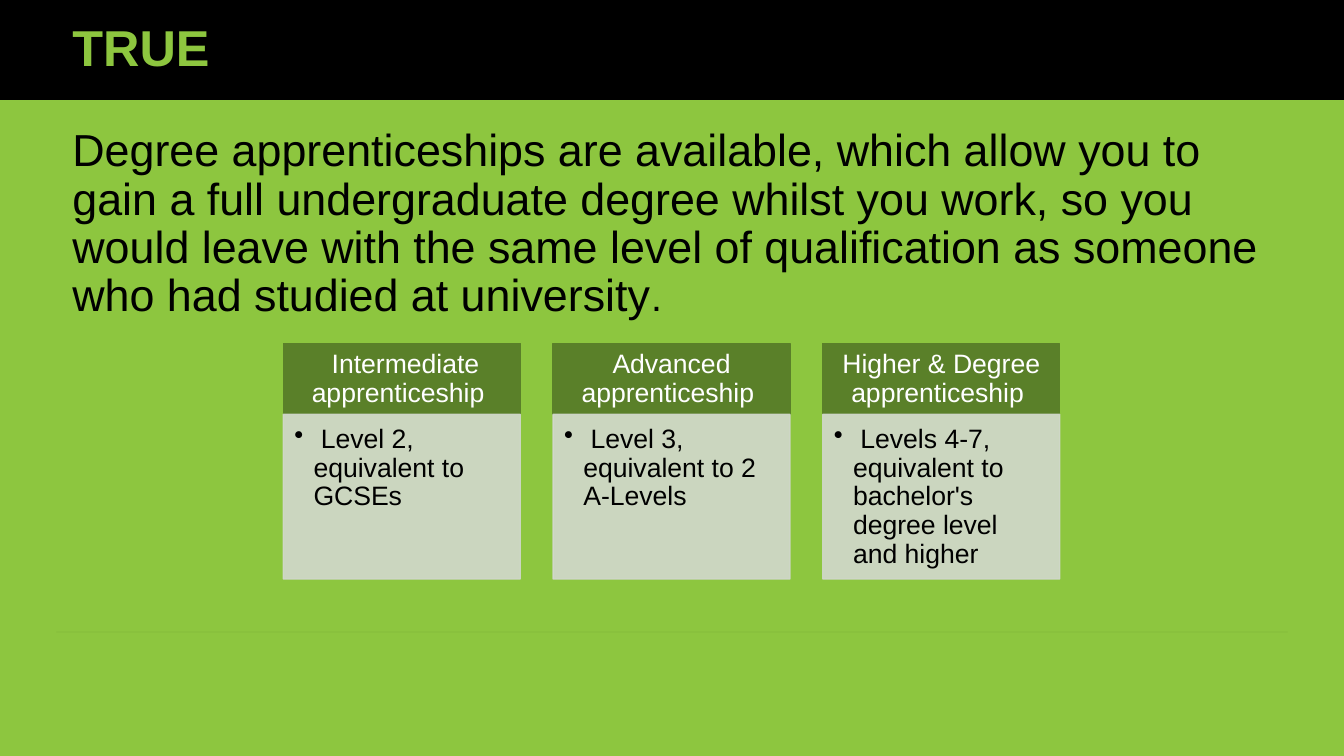
"""Build the slide on degree apprenticeships with its three level cards."""
from dataclasses import dataclass

from lxml.etree import SubElement
from pptx import Presentation
from pptx.dml.color import RGBColor
from pptx.enum.shapes import MSO_CONNECTOR as Connector, MSO_SHAPE as Preset
from pptx.enum.text import MSO_ANCHOR as Anchor, PP_ALIGN as Align
from pptx.oxml.ns import qn
from pptx.util import Inches, Pt


@dataclass(frozen=True)
class Theme:
    font: str = "Arial"
    lime: str = "8DC63F"
    moss: str = "5A8029"
    mist: str = "D2D8CD"
    black: str = "000000"
    white: str = "FFFFFF"
    title_size: int = 36
    lead_size: int = 32
    stop_size: int = 28
    card_size: int = 19
    line_spacing: float = 0.9


@dataclass(frozen=True)
class Area:
    """Position and size in percent of the slide."""
    left: float
    top: float
    width: float
    height: float


@dataclass(frozen=True)
class Card:
    heading: str
    detail: str


THEME = Theme()
SLIDE_WIDTH, SLIDE_HEIGHT = Inches(13.33), Inches(7.5)
BACKDROP = Area(0, 0, 100, 100)
BANNER = Area(0, 0, 100, 13.2)
TITLE = Area(4.65, 2.93, 90.75, 7.47)
LEAD = Area(4.65, 16.27, 90.75, 64.4)
RULE = Area(4.2, 83.6, 91.6, 0)
FIRST_CARD, CARD_PITCH, CARD_WIDTH = 21.08, 20.07, 17.63
HEADING_TOP, HEADING_HEIGHT, DETAIL_HEIGHT = 45.47, 9.33, 21.8
HEADING_INSETS = (0.15, 0.08, 0.15, 0.08)
DETAIL_INSETS = (0.11, 0.11, 0.15, 0.17)
BULLET_INDENT = Inches(0.19)

LEAD_TEXT = (
    "Degree apprenticeships are available, which allow you to gain a full "
    "undergraduate degree whilst you work, so you would leave with the same "
    "level of qualification as someone who had studied at university"
)
CARDS = [
    Card(" Intermediate apprenticeship ", " Level 2, equivalent to GCSEs"),
    Card("Advanced apprenticeship ", " Level 3, equivalent to 2 A-Levels"),
    Card("Higher & Degree apprenticeship ",
         " Levels 4-7, equivalent to bachelor's degree level and higher"),
]


def across(percent: float) -> int:
    return round(SLIDE_WIDTH * percent / 100)


def down(percent: float) -> int:
    return round(SLIDE_HEIGHT * percent / 100)


def place(area: Area) -> tuple[int, int, int, int]:
    return across(area.left), down(area.top), across(area.width), down(area.height)


def set_alpha(properties, percent: int) -> None:
    for color in properties.iter(qn("a:srgbClr")):
        SubElement(color, qn("a:alpha"), val=str(percent * 1000))


def style_font(font, size: int, color: str, bold: bool = False) -> None:
    font.name, font.size, font.bold = THEME.font, Pt(size), bold
    font.color.rgb = RGBColor.from_string(color)


def add_panel(page, area: Area, fill: str, outlined: bool = True):
    panel = page.shapes.add_shape(Preset.RECTANGLE, *place(area))
    panel.shadow.inherit = False
    panel.fill.solid()
    panel.fill.fore_color.rgb = RGBColor.from_string(fill)
    if outlined:
        panel.line.color.rgb = RGBColor.from_string(fill)
        panel.line.width = Pt(1)
    else:
        panel.line.fill.background()
    return panel


def add_rule(page) -> None:
    left, top, width, height = place(RULE)
    rule = page.shapes.add_connector(
        Connector.STRAIGHT, left, top, left + width, top + height)
    rule.line.color.rgb = RGBColor.from_string(THEME.moss)
    rule.line.width = Pt(0.5)
    properties = rule.line._get_or_add_ln().getparent()
    set_alpha(properties, 18)
    SubElement(properties, qn("a:effectLst"))


def add_text_box(page, area: Area, anchor: Anchor):
    frame = page.shapes.add_textbox(*place(area)).text_frame
    frame.word_wrap = True
    frame.vertical_anchor = anchor
    para = frame.paragraphs[0]
    para.line_spacing = THEME.line_spacing
    return para


def fill_panel(panel, text: str, insets: tuple[float, ...], anchor: Anchor,
               align: Align, color: str, bulleted: bool = False) -> None:
    frame = panel.text_frame
    frame.word_wrap = True
    frame.vertical_anchor = anchor
    (frame.margin_left, frame.margin_top,
     frame.margin_right, frame.margin_bottom) = map(Inches, insets)
    para = frame.paragraphs[0]
    para.text = text
    if bulleted:
        properties = para._p.get_or_add_pPr()
        properties.set("marL", str(BULLET_INDENT))
        properties.set("indent", str(-BULLET_INDENT))
        SubElement(properties, qn("a:buChar"), char="•")
    para.alignment = align
    para.line_spacing = THEME.line_spacing
    style_font(para.font, THEME.card_size, color)


def add_card(page, column: int, card: Card) -> None:
    left = FIRST_CARD + column * CARD_PITCH
    heading = add_panel(
        page, Area(left, HEADING_TOP, CARD_WIDTH, HEADING_HEIGHT), THEME.moss)
    fill_panel(heading, card.heading, HEADING_INSETS, Anchor.MIDDLE,
               Align.CENTER, THEME.white)
    detail_top = HEADING_TOP + HEADING_HEIGHT
    detail = add_panel(
        page, Area(left, detail_top, CARD_WIDTH, DETAIL_HEIGHT), THEME.mist)
    set_alpha(detail._element.spPr, 90)
    fill_panel(detail, card.detail, DETAIL_INSETS, Anchor.TOP,
               Align.LEFT, THEME.black, bulleted=True)


def main() -> None:
    deck = Presentation()
    deck.slide_width, deck.slide_height = SLIDE_WIDTH, SLIDE_HEIGHT
    page = deck.slides.add_slide(deck.slide_layouts[6])

    add_panel(page, BACKDROP, THEME.lime)
    add_rule(page)
    add_panel(page, BANNER, THEME.black, outlined=False)

    title = add_text_box(page, TITLE, Anchor.MIDDLE)
    title.text = "TRUE"
    style_font(title.font, THEME.title_size, THEME.lime, bold=True)

    lead = add_text_box(page, LEAD, Anchor.TOP)
    for text, size in ((LEAD_TEXT, THEME.lead_size), (".", THEME.stop_size)):
        span = lead.add_run()
        span.text = text
        style_font(span.font, size, THEME.black)

    for column, card in enumerate(CARDS):
        add_card(page, column, card)

    deck.save("out.pptx")


if __name__ == "__main__":
    main()
